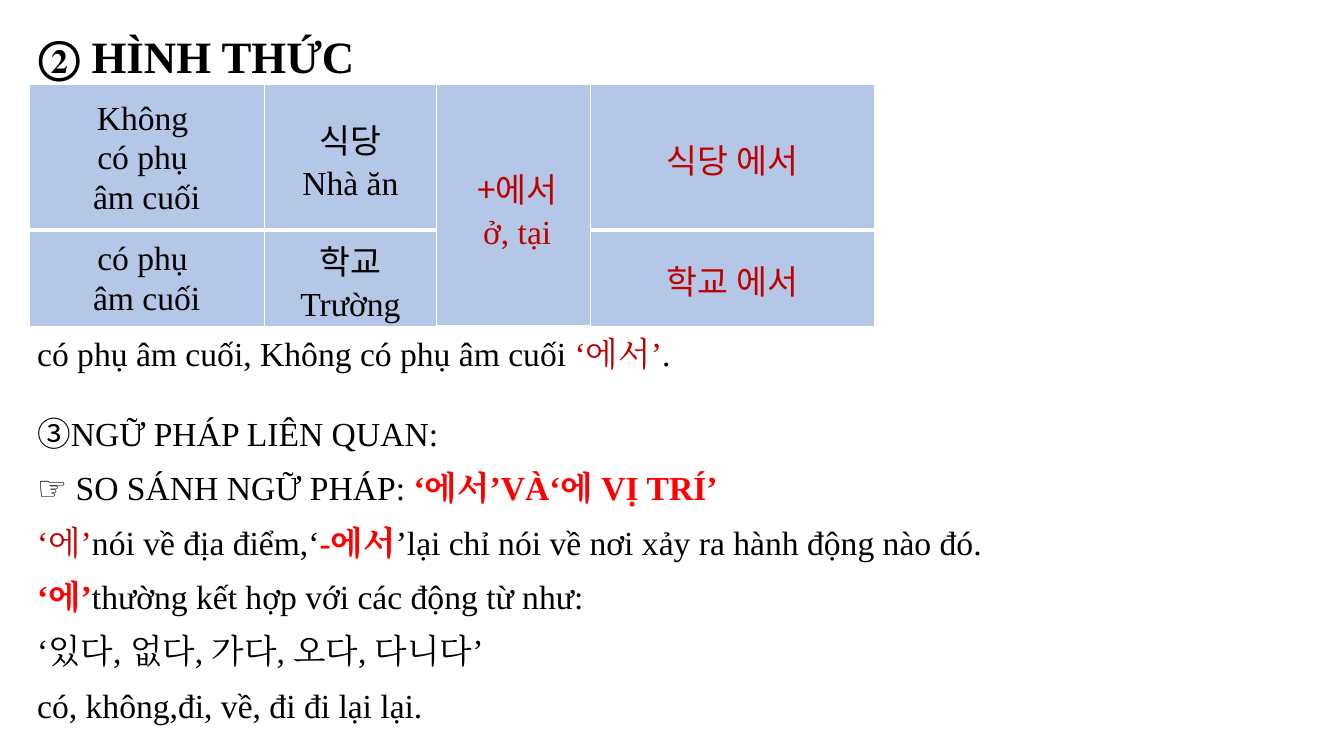
from dataclasses import dataclass

from lxml import etree
from pptx import Presentation
from pptx import util as u
from pptx.dml.color import RGBColor
from pptx.enum import text
from pptx.oxml import ns


@dataclass(frozen=True)
class Theme:
    latin: str = "Times New Roman"
    korean: str = "Noto Sans CJK KR"
    symbol: str = "Karla"
    black: str = "000000"
    dark_red: str = "C00000"
    red: str = "FF0000"
    cell: str = "B4C7E7"
    border: str = "FFFFFF"
    title_size: int = 32
    body_size: int = 24
    line_spacing: float = 1.07
    space_after: int = 8


THEME = Theme()


@dataclass(frozen=True)
class Run:
    words: str
    color: str = THEME.black
    bold: bool = False
    font: str = THEME.latin
    size: int = THEME.body_size


@dataclass(frozen=True)
class Line:
    runs: tuple[Run, ...]
    before: int = 0
    margin: float = 0
    indent: float = 0


@dataclass(frozen=True)
class Cell:
    row: int
    column: int
    lines: tuple[Line, ...]


def korean(words: str, color: str = THEME.black) -> Line:
    return Line((Run(words, color, font=THEME.korean),))


def latin(words: str, color: str = THEME.black, indent: float = 0) -> Line:
    return Line((Run(words, color),), indent=indent)


def hanging(*runs: Run) -> Line:
    return Line(runs, margin=0.08, indent=-0.08)


COLUMNS = (2.33, 1.71, 1.53, 2.81)
ROWS = (1.44, 0.96)
CELLS = (
    Cell(0, 0, (latin("Không "), latin("có phụ "), latin("âm cuối"))),
    Cell(0, 1, (korean("식당"), latin("Nhà ăn"))),
    Cell(0, 2, (korean(" +에서", THEME.dark_red), latin("ở, tại", THEME.dark_red, 0.07))),
    Cell(0, 3, (korean("식당 에서", THEME.dark_red),)),
    Cell(1, 0, (latin("có phụ "), latin("âm cuối"))),
    Cell(1, 1, (korean("학교"), latin("Trường"))),
    Cell(1, 3, (korean("학교 에서", THEME.dark_red),)),
)
HEADING = (Line((Run("② HÌNH THỨC", bold=True, size=THEME.title_size),)),)
NOTES = (
    Line((Run("có phụ âm cuối, Không có phụ âm cuối"),
          Run(" ‘에서’", THEME.dark_red), Run(". "))),
    Line((Run("③", font=THEME.korean), Run("NGỮ PHÁP LIÊN QUAN: ")), before=18),
    Line((Run("☞", font=THEME.symbol), Run(" SO SÁNH NGỮ PHÁP: "),
          Run("‘에서’VÀ‘에 VỊ TRÍ’", THEME.red, True))),
    hanging(Run("‘에’", THEME.dark_red), Run("nói về địa điểm,‘"),
            Run("-에서", THEME.red, True),
            Run("’lại chỉ nói về nơi xảy ra hành động nào đó.")),
    hanging(Run("‘에’", THEME.red, True), Run("thường kết hợp với các động từ như: ")),
    hanging(Run("‘있다, 없다, 가다, 오다, 다니다’")),
    hanging(Run("có, không,đi, về, đi đi lại lại. ")),
)


def write(frame, lines: tuple[Line, ...], align, after: int = 0) -> None:
    for index, line in enumerate(lines):
        paragraph = frame.paragraphs[0] if index == 0 else frame.add_paragraph()
        formats = {"alignment": align, "line_spacing": THEME.line_spacing,
                   "space_before": u.Pt(line.before), "space_after": u.Pt(after)}
        for name, value in formats.items():
            setattr(paragraph, name, value)
        properties = paragraph._p.get_or_add_pPr()
        properties.set("marL", str(u.Inches(line.margin)))
        properties.set("indent", str(u.Inches(line.indent)))
        for part in line.runs:
            run = paragraph.add_run()
            run.text = part.words
            for name, value in {"name": part.font, "size": u.Pt(part.size),
                                "bold": part.bold}.items():
                setattr(run.font, name, value)
            run.font.color.rgb = RGBColor.from_string(part.color)
            east_asian = etree.SubElement(run._r.get_or_add_rPr(), ns.qn("a:ea"))
            east_asian.set("typeface", part.font)


def style_cell(cell, bottom: int) -> None:
    """Give the cell its borders, fill and insets."""
    properties = cell._tc.get_or_add_tcPr()
    for side, points in {"L": 1, "R": 1, "T": 1, "B": bottom}.items():
        edge = etree.SubElement(properties, ns.qn(f"a:ln{side}"), w=str(u.Pt(points)))
        fill = etree.SubElement(edge, ns.qn("a:solidFill"))
        etree.SubElement(fill, ns.qn("a:srgbClr"), val=THEME.border)
    cell.fill.solid()
    cell.fill.fore_color.rgb = RGBColor.from_string(THEME.cell)
    formats = {"margin_left": u.Inches(0.07), "margin_right": u.Inches(0.07),
               "margin_top": 0, "margin_bottom": 0,
               "vertical_anchor": text.MSO_ANCHOR.MIDDLE}
    for name, value in formats.items():
        setattr(cell, name, value)


def add_forms_table(slide) -> None:
    table = slide.shapes.add_table(
        len(ROWS), len(COLUMNS), u.Inches(0.29), u.Inches(0.84),
        u.Inches(sum(COLUMNS)), u.Inches(sum(ROWS))).table
    table.first_row = table.horz_banding = False
    for column, width in zip(table.columns, COLUMNS):
        column.width = u.Inches(width)
    for index, (row, height) in enumerate(zip(table.rows, ROWS)):
        row.height = u.Inches(height)
        for cell in row.cells:
            style_cell(cell, bottom=3 if index == 0 else 1)
    table.cell(0, 2).merge(table.cell(1, 2))
    for entry in CELLS:
        write(table.cell(entry.row, entry.column).text_frame, entry.lines,
              text.PP_ALIGN.CENTER)


def add_title(slide) -> None:
    title = slide.shapes.title
    for name, inches in {"left": 0.28, "top": 0.2, "width": 3.39, "height": 0.63}.items():
        setattr(title, name, u.Inches(inches))
    frame = title.text_frame
    for name, value in {"word_wrap": False, "vertical_anchor": text.MSO_ANCHOR.TOP,
                        "auto_size": text.MSO_AUTO_SIZE.SHAPE_TO_FIT_TEXT}.items():
        setattr(frame, name, value)
    write(frame, HEADING, text.PP_ALIGN.JUSTIFY, THEME.space_after)


def add_notes(slide) -> None:
    frame = slide.shapes.add_textbox(
        u.Inches(0.27), u.Inches(3.23), u.Inches(10.32), u.Inches(4.06)).text_frame
    frame.word_wrap = True
    frame.auto_size = text.MSO_AUTO_SIZE.SHAPE_TO_FIT_TEXT
    write(frame, NOTES, text.PP_ALIGN.JUSTIFY, THEME.space_after)


def main() -> None:
    deck = Presentation()
    deck.slide_width = u.Inches(13.33)
    deck.slide_height = u.Inches(7.5)
    slide = deck.slides.add_slide(deck.slide_layouts[5])
    add_title(slide)
    add_forms_table(slide)
    add_notes(slide)
    deck.save("out.pptx")


if __name__ == "__main__":
    main()
